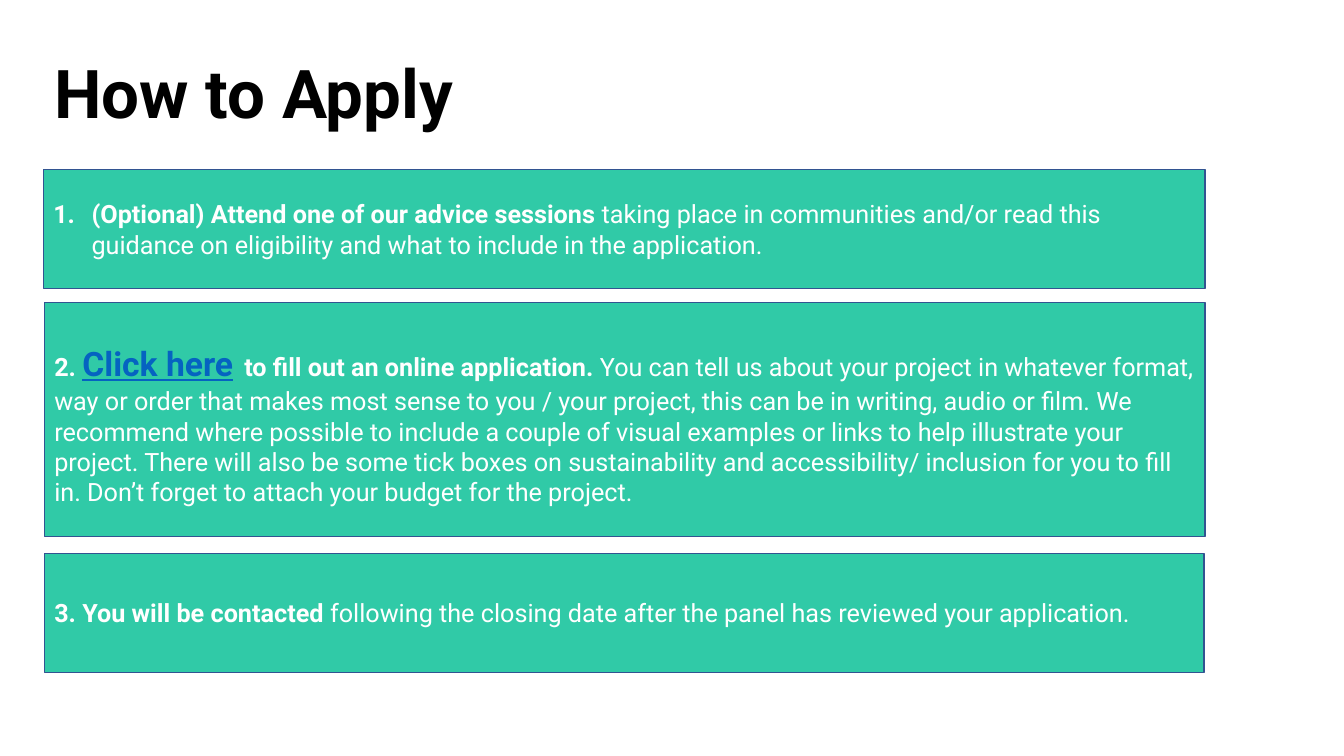
import pptx
import pptx.util
import pptx.dml.color
import pptx.enum.shapes
import pptx.enum.text
import pptx.oxml.ns
import lxml.etree

Inches = pptx.util.Inches
Pt = pptx.util.Pt
RGBColor = pptx.dml.color.RGBColor
Anchor = pptx.enum.text.MSO_ANCHOR
Align = pptx.enum.text.PP_ALIGN

BLACK = RGBColor(0x00, 0x00, 0x00)
WHITE = RGBColor(0xFF, 0xFF, 0xFF)
GREEN = RGBColor(0x30, 0xCA, 0xA7)
NAVY = RGBColor(0x32, 0x54, 0x91)
LINK = RGBColor(0x05, 0x63, 0xC1)

FONT = "Roboto"
INDENT = Inches(0.38)

# Each run: text, bold, size, colour, underline
STEPS = [
    ((0.43, 1.68, 11.52, 1.18), True, [
        ("(Optional) Attend one of our advice sessions ", True, 18, WHITE, False),
        ("taking place in communities and/or read this guidance on eligibility "
         "and what to include in the application.", False, 18, WHITE, False),
    ]),
    ((0.44, 3, 11.51, 2.32), False, [
        ("2. ", True, 18, WHITE, False),
        ("Click here", True, 24, LINK, True),
        (" ", True, 32, WHITE, False),
        ("to fill out an online application. ", True, 18, WHITE, False),
        ("You can tell us about your project in whatever format, way or order "
         "that makes most sense to you / your project, this can be in writing, "
         "audio or film. We recommend where possible to include a couple of "
         "visual examples or links to help illustrate your project. There will "
         "also be some tick boxes on sustainability and accessibility/ "
         "inclusion for you to fill in. Don’t forget to attach your budget for "
         "the project.", False, 18, WHITE, False),
    ]),
    ((0.44, 5.49, 11.5, 1.18), False, [
        ("3. You will be contacted ", True, 18, WHITE, False),
        ("following the closing date after the panel has reviewed your "
         "application.", False, 18, WHITE, False),
    ]),
]


def add_title(slide, box, text):
    frame = slide.shapes.add_textbox(*map(Inches, box)).text_frame
    frame.word_wrap = True
    frame.vertical_anchor = Anchor.MIDDLE
    para = frame.paragraphs[0]
    para.text = text
    para.line_spacing = 0.9
    para.font.name = FONT
    para.font.size = Pt(48)
    para.font.bold = True
    para.font.color.rgb = BLACK


def number(para):
    """Give the paragraph an automatic number and a hanging indent."""
    props = para._p.get_or_add_pPr()
    props.set("marL", str(INDENT))
    props.set("indent", str(-INDENT))
    mark = lxml.etree.Element(pptx.oxml.ns.qn("a:buAutoNum"), type="arabicPeriod")
    props.insert(0, mark)


def add_step(slide, box, listed, runs):
    kind = pptx.enum.shapes.MSO_SHAPE.FLOWCHART_PROCESS
    panel = slide.shapes.add_shape(kind, *map(Inches, box))
    panel.shadow.inherit = False
    panel.fill.solid()
    panel.fill.fore_color.rgb = GREEN
    panel.line.color.rgb = NAVY
    panel.line.width = Pt(1)
    frame = panel.text_frame
    frame.word_wrap = True
    frame.vertical_anchor = Anchor.MIDDLE
    para = frame.paragraphs[0]
    para.alignment = Align.LEFT
    para.font.name = FONT
    if listed:
        number(para)
    for text, bold, size, color, under in runs:
        run = para.add_run()
        run.text = text
        run.font.bold = bold
        run.font.size = Pt(size)
        run.font.color.rgb = color
        run.font.underline = under


def main():
    deck = pptx.Presentation()
    deck.slide_width = Inches(13.33)
    deck.slide_height = Inches(7.5)
    slide = deck.slides.add_slide(deck.slide_layouts[6])
    add_title(slide, (0.44, 0.23, 11.5, 1.45), "How to Apply")
    for box, listed, runs in STEPS:
        add_step(slide, box, listed, runs)
    deck.save("out.pptx")


if __name__ == "__main__":
    main()
